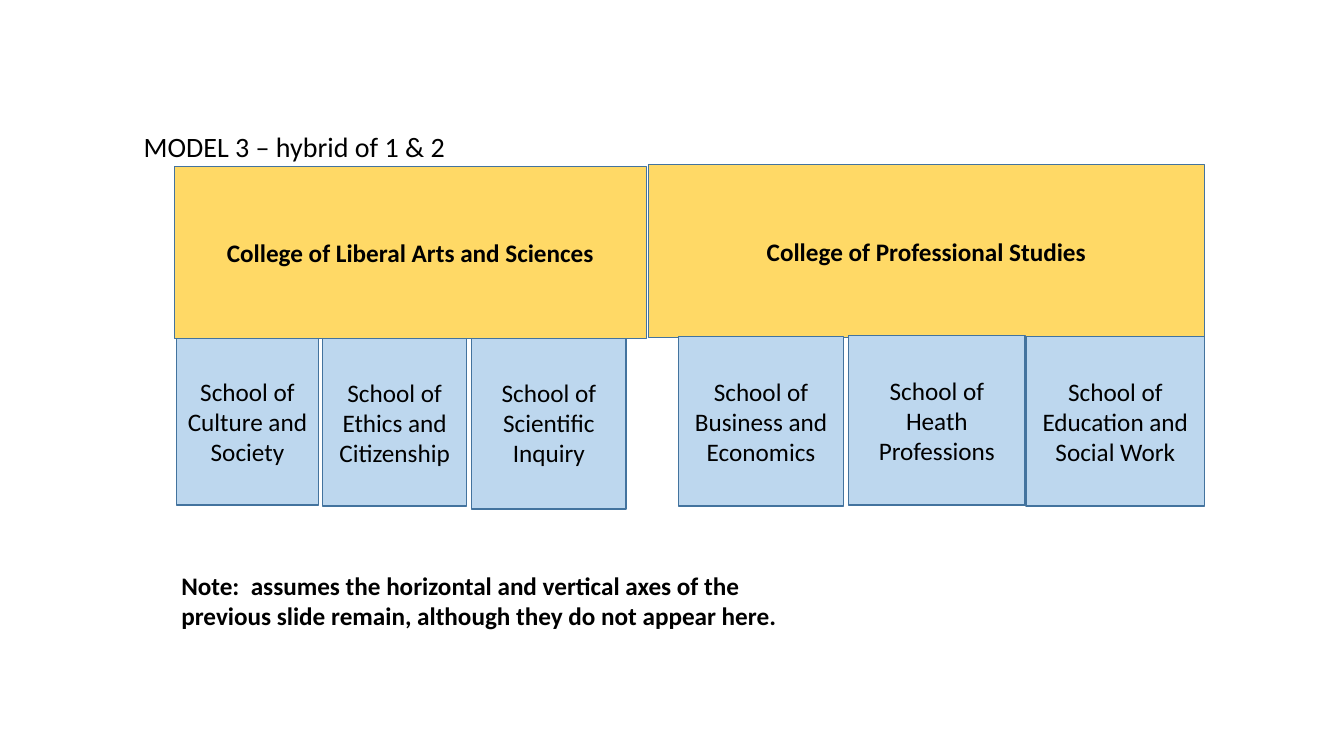
from pptx import Presentation
from pptx.dml.color import RGBColor
from pptx.enum.shapes import MSO_SHAPE as Shape
from pptx.enum.text import MSO_ANCHOR as Anchor, PP_ALIGN as Align
from pptx.util import Pt

FONT = "Calibri"
BLACK, BLUE, GOLD, OUTLINE = "000000", "BDD7EE", "FFD966", "43739E"

# Name, then left, top, width, height in points
LIBERAL_SCHOOLS = [
    ("School of Culture and Society", 126, 241.2, 101.5, 119.5),
    ("School of Ethics and Citizenship", 230.4, 241.9, 103, 119.5),
    ("School of Scientific Inquiry", 337, 239.8, 110.2, 123.8),
]
COLLEGES = [
    ("College of Liberal Arts and Sciences", 124.6, 118.8, 337, 123.1),
    ("College of Professional Studies", 463, 117.4, 397.4, 123.8),
]
PROFESSIONAL_SCHOOLS = [
    ("School of Business and Economics", 484.6, 240.5, 118, 121),
    ("School of Heath Professions", 606.2, 239.8, 126, 121),
    ("School of Education and Social Work", 733, 240.5, 127.4, 121),
]


def color(value):
    return RGBColor.from_string(value)


def write(box, text, size, bold, align):
    frame = box.text_frame
    frame.word_wrap = True
    frame.text = text
    para = frame.paragraphs[0]
    para.alignment = align
    font = para.runs[0].font
    font.name, font.size, font.bold = FONT, Pt(size), bold
    font.color.rgb = color(BLACK)


def add_unit(slide, text, left, top, width, height, fill, bold=False):
    box = slide.shapes.add_shape(
        Shape.RECTANGLE, Pt(left), Pt(top), Pt(width), Pt(height))
    box.shadow.inherit = False
    box.fill.solid()
    box.fill.fore_color.rgb = color(fill)
    box.line.color.rgb = color(OUTLINE)
    box.line.width = Pt(1)
    box.text_frame.vertical_anchor = Anchor.MIDDLE
    write(box, text, 18, bold, Align.CENTER)


def add_label(slide, text, left, top, width, height, size, bold=False):
    box = slide.shapes.add_textbox(Pt(left), Pt(top), Pt(width), Pt(height))
    write(box, text, size, bold, Align.LEFT)


def main():
    deck = Presentation()
    deck.slide_width, deck.slide_height = Pt(960), Pt(540)
    slide = deck.slides.add_slide(deck.slide_layouts[6])

    # Heading
    add_label(slide, "MODEL 3 – hybrid of 1 & 2", 95.5, 89, 400, 32, 20)

    # Colleges overlap the liberal arts schools below them
    for school in LIBERAL_SCHOOLS:
        add_unit(slide, *school, BLUE)
    for college in COLLEGES:
        add_unit(slide, *college, GOLD, bold=True)
    for school in PROFESSIONAL_SCHOOLS:
        add_unit(slide, *school, BLUE)

    # Note; its label is followed by a double space
    add_label(slide, "Note:  assumes the horizontal and vertical axes of the "
              "previous slide remain, although they do not appear here.",
              122.4, 403.9, 478, 51, 18, bold=True)

    deck.save("out.pptx")


if __name__ == "__main__":
    main()
